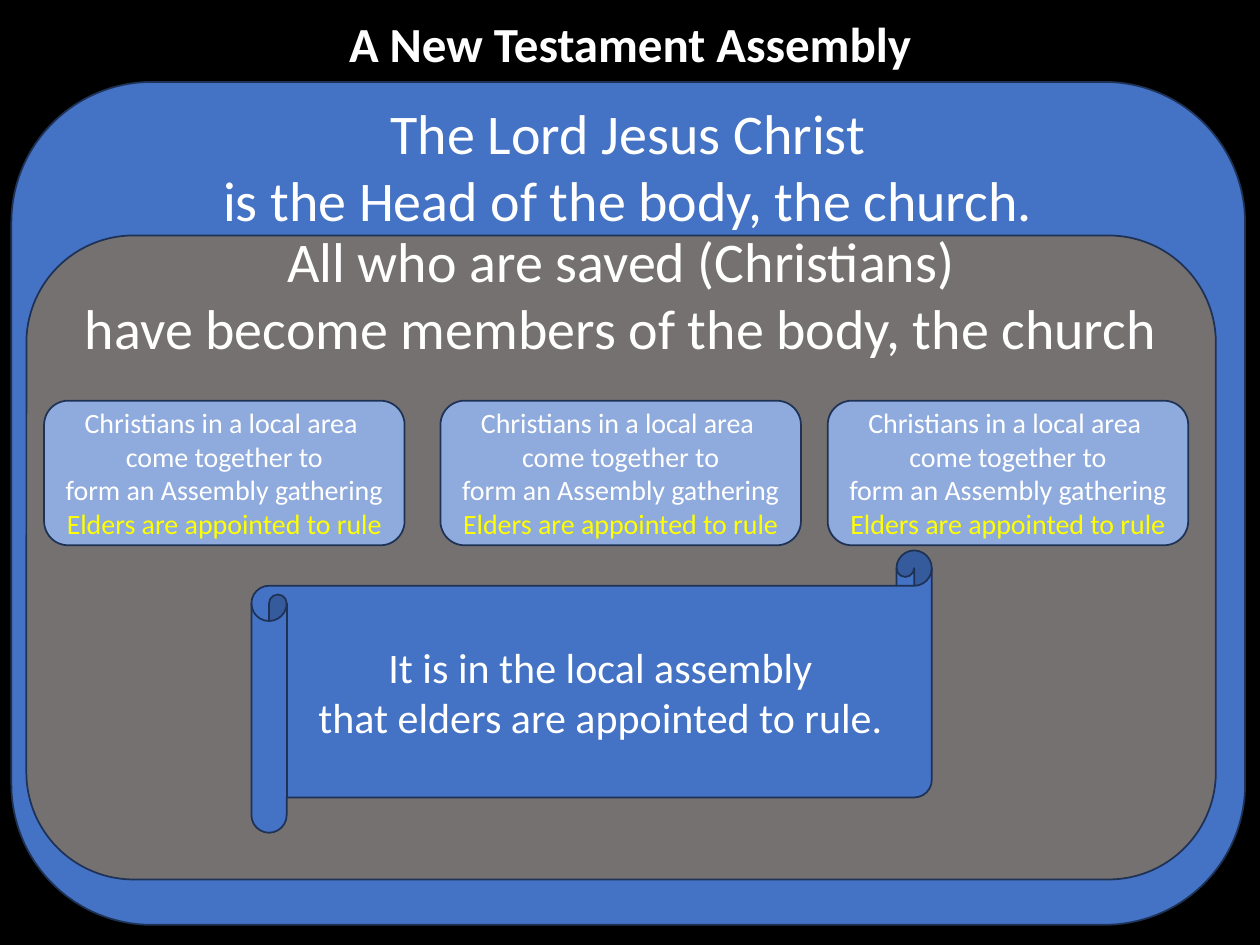
from pptx import Presentation
from pptx.dml.color import RGBColor
from pptx.enum.shapes import MSO_SHAPE
from pptx.enum.text import MSO_ANCHOR, MSO_AUTO_SIZE, PP_ALIGN
from pptx.util import Pt

BLUE, GREY, PALE_BLUE = "4472C4", "767171", "8FAADC"
OUTLINE, WHITE, YELLOW, BLACK = "1E3256", "FFFFFF", "FFFF00", "000000"


def color(value):
    return RGBColor.from_string(value)


class AssemblySlide:
    font = "Calibri"

    def __init__(self, slide):
        self.slide = slide
        slide.background.fill.solid()
        slide.background.fill.fore_color.rgb = color(BLACK)

    def add_lines(self, frame, lines, size, bold=False):
        frame.word_wrap = True
        for index, (wording, ink) in enumerate(lines):
            paragraph = frame.add_paragraph() if index else frame.paragraphs[0]
            paragraph.alignment = PP_ALIGN.CENTER
            run = paragraph.add_run()
            run.text = wording
            run.font.name = self.font
            run.font.size = Pt(size)
            run.font.bold = bold
            run.font.color.rgb = color(ink)

    def title(self, wording, left, top, width, height):
        heading = self.slide.shapes.title
        heading.left, heading.top = Pt(left), Pt(top)
        heading.width, heading.height = Pt(width), Pt(height)
        heading.text_frame.auto_size = MSO_AUTO_SIZE.NONE
        heading.text_frame.vertical_anchor = MSO_ANCHOR.TOP
        self.add_lines(heading.text_frame, [(wording, WHITE)], 28, bold=True)

    def panel(self, kind, box, fill, lines, size, insets=(3.6, 3.6)):
        panel = self.slide.shapes.add_shape(kind, *map(Pt, box))
        panel.shadow.inherit = False
        panel.fill.solid()
        panel.fill.fore_color.rgb = color(fill)
        panel.line.color.rgb = color(OUTLINE)
        panel.line.width = Pt(1)
        frame = panel.text_frame
        frame.vertical_anchor = MSO_ANCHOR.MIDDLE
        frame.margin_top, frame.margin_bottom = map(Pt, insets)
        self.add_lines(frame, lines, size)


def main():
    deck = Presentation()
    deck.slide_width, deck.slide_height = Pt(720), Pt(540)
    page = AssemblySlide(deck.slides.add_slide(deck.slide_layouts[5]))
    rounded = MSO_SHAPE.ROUNDED_RECTANGLE

    page.title("A New Testament Assembly", 0, 4.3, 720, 41)

    head = [
        ("The Lord Jesus Christ", WHITE),
        ("is the Head of the body, the church.", WHITE),
    ]
    page.panel(rounded, (6.5, 46.8, 705, 481.7), BLUE, head, 32, (0, 386))

    members = [
        ("All who are saved (Christians)", WHITE),
        ("have become members of the body, the church", WHITE),
    ]
    page.panel(rounded, (15.1, 134.6, 679.7, 368), GREY, members, 32, (0, 302))

    gathering = [
        ("Christians in a local area ", WHITE),
        ("come together to", WHITE),
        ("form an Assembly gathering", WHITE),
        ("Elders are appointed to rule", YELLOW),
    ]
    for left in (25.2, 251.7, 473):
        page.panel(rounded, (left, 229, 206, 82.6), PALE_BLUE, gathering, 16)

    elders = [
        ("It is in the local assembly", WHITE),
        ("that elders are appointed to rule.", WHITE),
    ]
    scroll_box = (143.7, 314.6, 388.8, 161.3)
    page.panel(MSO_SHAPE.HORIZONTAL_SCROLL, scroll_box, BLUE, elders, 24)

    deck.save("out.pptx")


if __name__ == "__main__":
    main()
